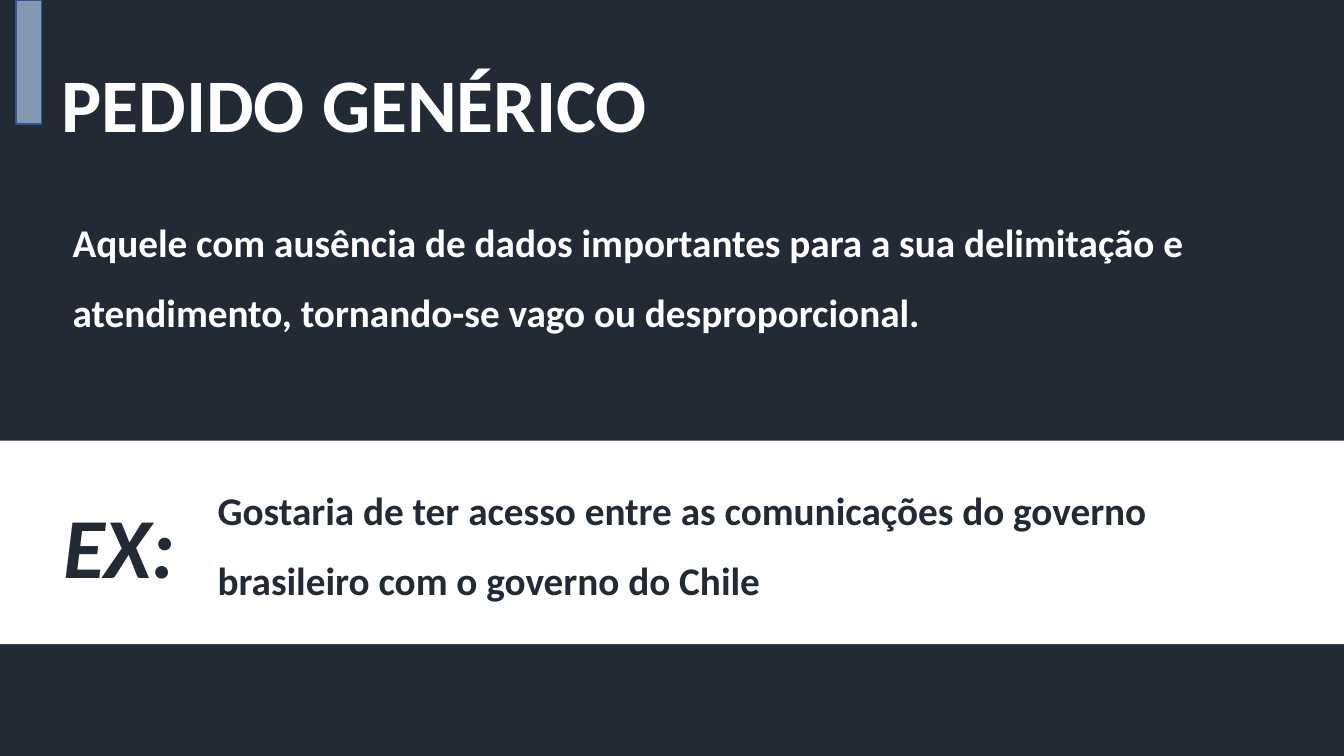
import pptx
import pptx.util
import pptx.dml.color
import pptx.enum.shapes
import pptx.enum.text
import pptx.oxml.ns
from lxml import etree

Inches = pptx.util.Inches
RECT = pptx.enum.shapes.MSO_SHAPE.RECTANGLE
ANCHOR = pptx.enum.text.MSO_ANCHOR
LEFT = pptx.enum.text.PP_ALIGN.LEFT

THEME = {
    "font": "Calibri",
    "navy": "222A35", "white": "FFFFFF", "steel": "8497B0", "edge": "325491",
    "title": 54, "body": 28, "label": 61,
}

BARS = [
    {"at": (0, 4.37, 13.33, 2.02), "fill": "white", "line": None},
    {"at": (0.16, 0, 0.25, 1.23), "fill": "steel", "line": "edge"},
]

TEXTS = [
    {"text": "PEDIDO GENÉRICO", "holder": 0, "at": (0.51, 0.51, 12.54, 1.13),
     "size": "title", "color": "white", "spacing": 0.9, "anchor": ANCHOR.MIDDLE},
    {"text": "Aquele com ausência de dados importantes para a sua delimitação e "
             "atendimento, tornando-se vago ou desproporcional.",
     "holder": 1, "at": (0.62, 1.88, 12.09, 1.65),
     "size": "body", "color": "white", "spacing": 1.5},
    {"text": "Gostaria de ter acesso entre as comunicações do governo "
             "brasileiro com o governo do Chile",
     "at": (2.06, 4.54, 10.65, 1.65),
     "size": "body", "color": "navy", "spacing": 1.5},
    {"text": "EX:", "at": (0.53, 4.5, 1.53, 1.4), "size": "label", "color": "navy",
     "spacing": 1.4, "anchor": ANCHOR.MIDDLE, "italic": True},
]


def rgb(name):
    return pptx.dml.color.RGBColor.from_string(THEME[name])


def apply(target, values):
    for name, value in values.items():
        setattr(target, name, value)


def box(at):
    return [Inches(v) for v in at]


def add_bar(s, bar):
    sp = s.shapes.add_shape(RECT, *box(bar["at"]))
    sp.shadow.inherit = False
    sp.fill.solid()
    sp.fill.fore_color.rgb = rgb(bar["fill"])
    if bar["line"]:
        sp.line.color.rgb = rgb(bar["line"])
        sp.line.width = pptx.util.Pt(1)
    else:
        sp.line.fill.background()


def add_text(s, item):
    if "holder" in item:
        sp = s.placeholders[item["holder"]]
        apply(sp, dict(zip(("left", "top", "width", "height"), box(item["at"]))))
    else:
        sp = s.shapes.add_textbox(*box(item["at"]))
    tf = sp.text_frame
    apply(tf, {"word_wrap": True, "auto_size": pptx.enum.text.MSO_AUTO_SIZE.NONE,
               "vertical_anchor": item.get("anchor", ANCHOR.TOP)})
    p = tf.paragraphs[0]
    apply(p, {"alignment": LEFT, "line_spacing": item["spacing"],
              "space_before": pptx.util.Pt(0)})
    if item.get("holder") == 1:
        props = p._p.get_or_add_pPr()
        props.set("marL", "0")
        props.set("indent", "0")
        etree.SubElement(props, pptx.oxml.ns.qn("a:buNone"))
    r = p.add_run()
    r.text = item["text"]
    apply(r.font, {"name": THEME["font"], "size": pptx.util.Pt(THEME[item["size"]]),
                   "bold": True, "italic": item.get("italic", False)})
    r.font.color.rgb = rgb(item["color"])


def main():
    prs = pptx.Presentation()
    apply(prs, {"slide_width": Inches(13.33), "slide_height": Inches(7.5)})
    s = prs.slides.add_slide(prs.slide_layouts[1])
    s.background.fill.solid()
    s.background.fill.fore_color.rgb = rgb("navy")
    for bar in BARS:
        add_bar(s, bar)
    for item in TEXTS:
        add_text(s, item)
    prs.save("out.pptx")


if __name__ == "__main__":
    main()
